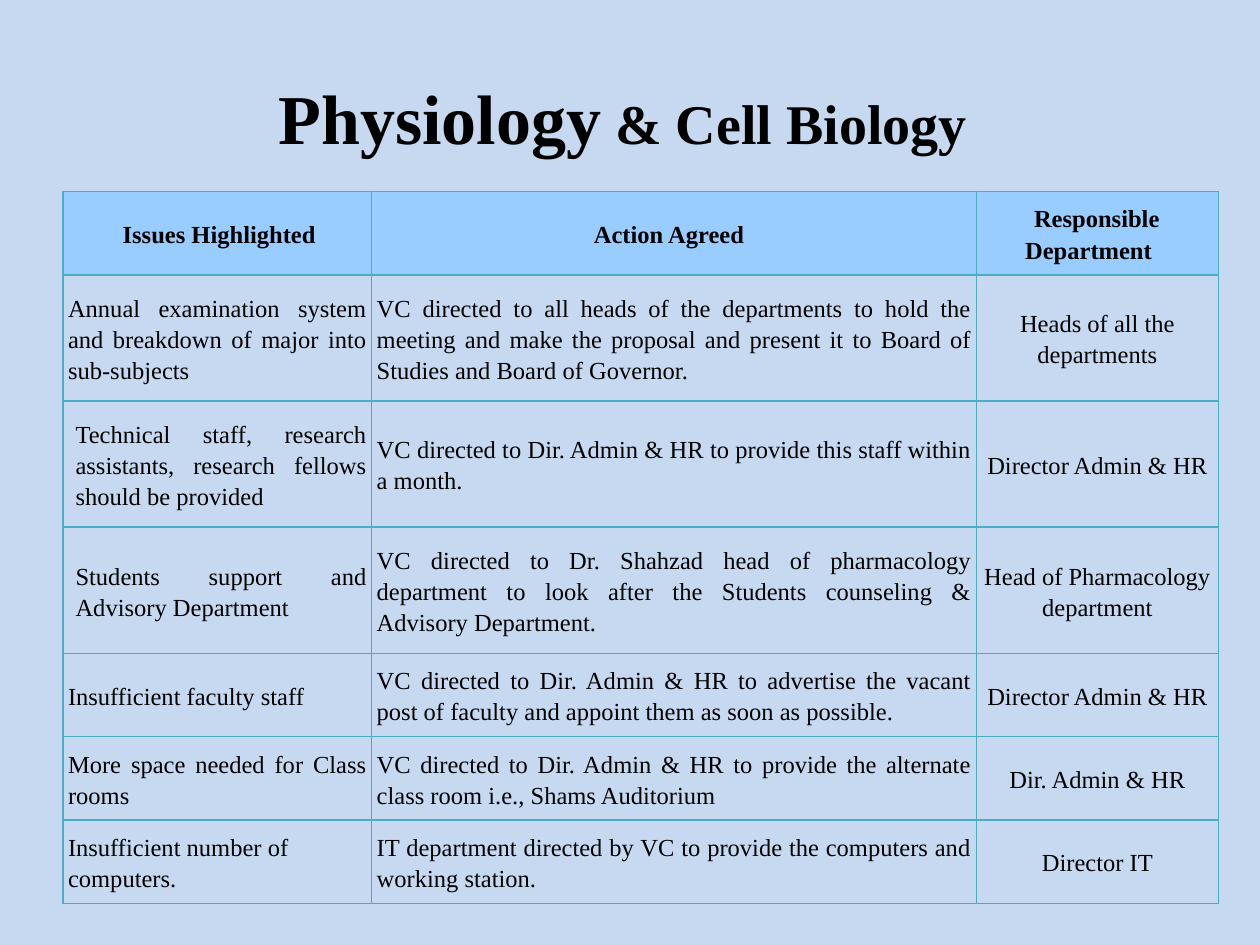
from lxml import etree
from pptx import Presentation
from pptx.dml.color import RGBColor
from pptx.enum.text import MSO_ANCHOR, PP_ALIGN
from pptx.oxml.ns import qn
from pptx.util import Inches, Pt

CENTER, JUSTIFY, LEFT = PP_ALIGN.CENTER, PP_ALIGN.JUSTIFY, PP_ALIGN.LEFT
MIDDLE = MSO_ANCHOR.MIDDLE
FONT = "Times New Roman"
BACKGROUND, HEADER_FILL, BORDER, BLACK = "C6D9F1", "99CCFF", "4BACC6", "000000"

COLUMN_WIDTHS = [2.45, 4.8, 1.92]
ROW_HEIGHTS = [0.66, 1, 1, 1, 0.66, 0.66, 0.66]

# Each header cell: lines of (text, left indent, right indent, space before)
HEADERS = [
    [("Issues Highlighted", 0.42, 0.39, 0)],
    [("Action Agreed", 0.32, 0.4, 0)],
    [("Responsible", 0.27, 0.28, 4.2), ("Department", 0.2, 0.34, 0)],
]

# Each row: issue, action, department, format of the issue
ROWS = [
    ("Annual examination system and breakdown of major into sub-subjects",
     "VC directed to all heads of the departments to hold the meeting and make "
     "the proposal and present it to Board of Studies and Board of Governor.",
     "Heads of all the departments", {"align": JUSTIFY, "before": 0.3}),
    ("Technical staff, research assistants, research fellows should be provided",
     "VC directed to Dir. Admin & HR to provide this staff within a month.",
     "Director Admin & HR", {"align": JUSTIFY, "left": 0.06, "before": 0.8}),
    ("Students support and Advisory Department",
     "VC directed to Dr. Shahzad head of pharmacology department to look after "
     "the Students counseling & Advisory Department.",
     "Head of Pharmacology department",
     {"align": JUSTIFY, "left": 0.06, "before": 0.8}),
    ("Insufficient faculty staff",
     "VC directed to Dir. Admin & HR to advertise the vacant post of faculty "
     "and appoint them as soon as possible.",
     "Director Admin & HR", {"align": LEFT}),
    ("More space needed for Class rooms",
     "VC directed to Dir. Admin & HR to provide the alternate class room i.e., "
     "Shams Auditorium",
     "Dir. Admin & HR", {"align": JUSTIFY}),
    ("Insufficient number of computers.",
     "IT department directed by VC to provide the computers and working station.",
     "Director IT", {"align": LEFT}),
]


def color(value):
    return RGBColor.from_string(value)


def write(paragraph, text, size=14, bold=False, align=CENTER, left=0, right=0,
          before=0, spacing=1.15):
    """Add a run to the paragraph and format both."""
    paragraph.alignment = align
    paragraph.line_spacing = spacing
    paragraph.space_before = Pt(before)
    properties = paragraph._p.get_or_add_pPr()
    properties.set("marL", str(Inches(left)))
    properties.set("marR", str(Inches(right)))
    properties.set("indent", "0")
    run = paragraph.add_run()
    run.text = text
    run.font.name = FONT
    run.font.size = Pt(size)
    run.font.bold = bold
    run.font.color.rgb = color(BLACK)


def format_cell(cell, fill=None):
    cell.vertical_anchor = MIDDLE
    cell.margin_left = cell.margin_right = Inches(0.04)
    cell.margin_top = cell.margin_bottom = 0
    # Borders go before the fill in the cell properties
    properties = cell._tc.get_or_add_tcPr()
    for side in ("a:lnL", "a:lnR", "a:lnT", "a:lnB"):
        line = etree.SubElement(properties, qn(side), w=str(Pt(1)))
        solid = etree.SubElement(line, qn("a:solidFill"))
        etree.SubElement(solid, qn("a:srgbClr"), val=BORDER)
    if fill:
        cell.fill.solid()
        cell.fill.fore_color.rgb = color(fill)
    else:
        cell.fill.background()


def place_title(slide, left, top, width, height):
    title = slide.shapes.title
    title.left, title.top = Inches(left), Inches(top)
    title.width, title.height = Inches(width), Inches(height)
    title.text_frame.vertical_anchor = MIDDLE
    paragraph = title.text_frame.paragraphs[0]
    write(paragraph, "Physiology", size=40, bold=True, spacing=1)
    write(paragraph, " & Cell Biology ", size=32, bold=True, spacing=1)


def place_issues_table(slide, left, top, width, height):
    table = slide.shapes.add_table(
        len(ROW_HEIGHTS), len(COLUMN_WIDTHS),
        Inches(left), Inches(top), Inches(width), Inches(height)).table
    table.first_row = table.horz_banding = False
    for column, share in zip(table.columns, COLUMN_WIDTHS):
        column.width = Inches(width * share / sum(COLUMN_WIDTHS))
    for row, share in zip(table.rows, ROW_HEIGHTS):
        row.height = Inches(height * share / sum(ROW_HEIGHTS))

    # Header row
    for column, lines in enumerate(HEADERS):
        cell = table.cell(0, column)
        format_cell(cell, HEADER_FILL)
        frame = cell.text_frame
        for number, (text, indent, right, before) in enumerate(lines):
            paragraph = frame.add_paragraph() if number else frame.paragraphs[0]
            write(paragraph, text, bold=True, left=indent, right=right,
                  before=before)

    # Body rows
    for row, (issue, action, department, issue_format) in enumerate(ROWS, 1):
        entries = [(issue, issue_format), (action, {"align": JUSTIFY}),
                   (department, {"align": CENTER})]
        for column, (text, text_format) in enumerate(entries):
            cell = table.cell(row, column)
            format_cell(cell)
            write(cell.text_frame.paragraphs[0], text, **text_format)


def main():
    presentation = Presentation()
    presentation.slide_width, presentation.slide_height = Inches(10), Inches(7.5)
    slide = presentation.slides.add_slide(presentation.slide_layouts[5])
    slide.background.fill.solid()
    slide.background.fill.fore_color.rgb = color(BACKGROUND)
    place_title(slide, 0.5, 0.3, 9, 1.25)
    place_issues_table(slide, 0.5, 1.52, 9.17, 5.65)
    presentation.save("out.pptx")


if __name__ == "__main__":
    main()
